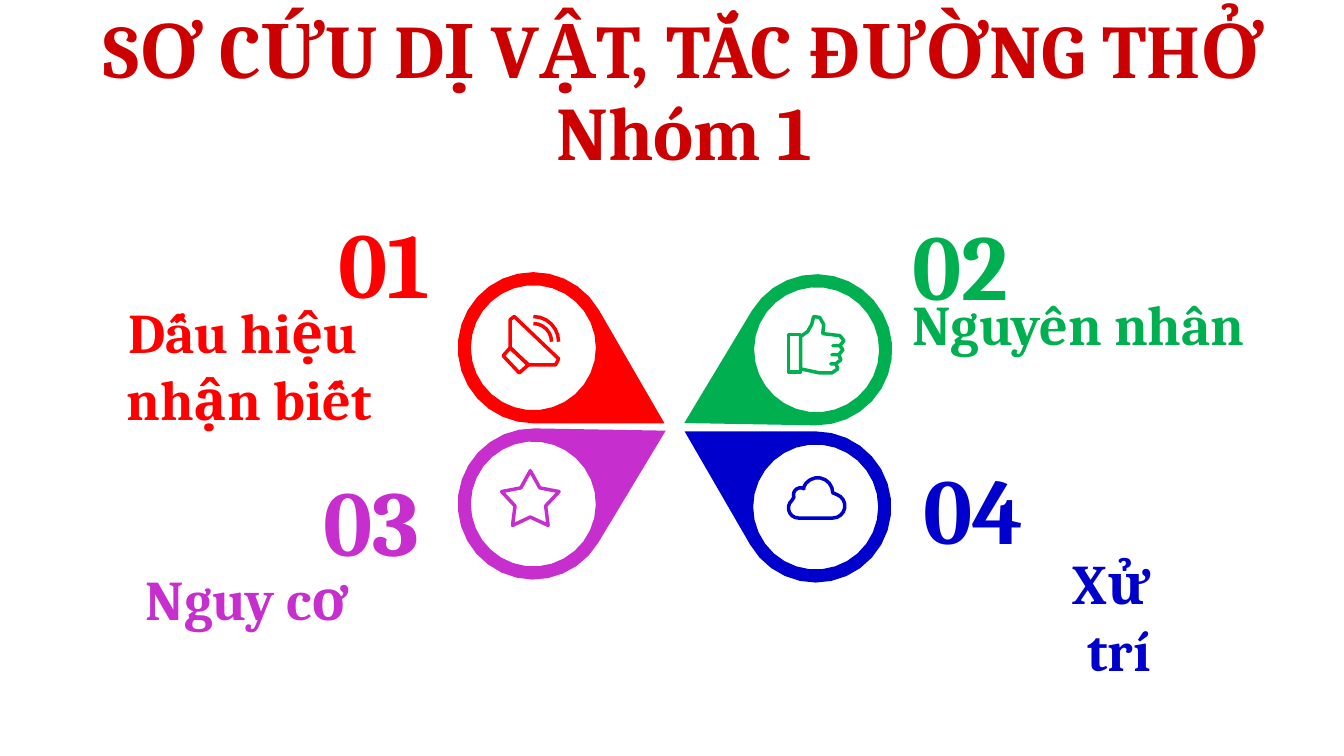
import math

import pptx
import pptx.dml.color
import pptx.enum.text
import pptx.util

Inches = pptx.util.Inches
ALIGN = pptx.enum.text.PP_ALIGN
ANCHOR = pptx.enum.text.MSO_ANCHOR
RGBColor = pptx.dml.color.RGBColor

WHITE = RGBColor(0xFF, 0xFF, 0xFF)
TITLE_RED = RGBColor(0xCC, 0x00, 0x00)
RED = RGBColor(0xFF, 0x00, 0x00)
GREEN = RGBColor(0x00, 0xB0, 0x50)
PURPLE = RGBColor(0xC6, 0x2E, 0xCD)
BLUE = RGBColor(0x00, 0x00, 0xCC)


def arc(center, radius, start, end, step=12):
    """List points on an arc, with angles clockwise from the right."""
    return [(center[0] + radius * math.cos(math.radians(angle)),
             center[1] + radius * math.sin(math.radians(angle)))
            for angle in range(start, end + 1, step)]


# Icons are stroked contours: thumb, speaker with two waves, star, cloud
THUMB = [
    [(7.82, 3.32), (7.94, 3.32), (7.94, 3.69), (7.82, 3.69)],
    [(7.94, 3.34), (8.01, 3.29), (8.05, 3.22), (8.07, 3.14), (8.13, 3.15), (8.17, 3.22),
     (8.16, 3.31), (8.33, 3.33), (8.37, 3.38), (8.33, 3.43), (8.26, 3.43), (8.33, 3.43),
     (8.36, 3.47), (8.32, 3.52), (8.25, 3.52), (8.32, 3.52), (8.34, 3.57), (8.29, 3.61),
     (8.24, 3.61), (8.29, 3.61), (8.31, 3.66), (8.25, 3.7), (8.13, 3.7), (7.94, 3.66)],
]
SPEAKER = [
    [(5.06, 3.17), (5.1, 3.14), (5.54, 3.56), (5.51, 3.62), (5.24, 3.62), (5.06, 3.45)],
    [(5.06, 3.45), (4.99, 3.53), (5.15, 3.7), (5.24, 3.62)],
]
INNER_WAVE, OUTER_WAVE = [[arc((5.29, 3.39), radius, -90, 0, 15)] for radius in (0.18, 0.25)]
STAR = [[point for angle in range(-90, 270, 72)
         for point in (arc((5.26, 4.97), 0.3, angle, angle)
                       + arc((5.26, 4.97), 0.16, angle + 36, angle + 36))]]
CLOUD = [arc((7.92, 5.04), 0.1, 90, 230, 20) + arc((7.94, 4.91), 0.07, 160, 300, 20)
         + arc((8.11, 4.89), 0.15, 200, 360, 20) + arc((8.26, 5.02), 0.12, -70, 90, 20)]


class Slide:
    font = "Cambria"
    stroke = pptx.util.Pt(2.5)

    def __init__(self, deck):
        self.page = deck.slides.add_slide(deck.slide_layouts[6])
        self.page.background.fill.solid()
        self.page.background.fill.fore_color.rgb = WHITE

    def group(self):
        return self.page.shapes.add_group_shape().shapes

    def text(self, text, place, shapes=None, size=40, color=TITLE_RED,
             align=ALIGN.LEFT, anchor=ANCHOR.TOP, spacing=1.0):
        box = (shapes or self.page.shapes).add_textbox(*map(Inches, place))
        frame = box.text_frame
        frame.word_wrap = True
        frame.vertical_anchor = anchor
        frame.text = text
        for para in frame.paragraphs:
            para.alignment = align
            para.line_spacing = spacing
            for span in para.runs:
                span.font.name = self.font
                span.font.size = pptx.util.Pt(size)
                span.font.bold = True
                span.font.color.rgb = color

    def outline(self, shapes, contours, close=True):
        first, *others = [[(Inches(x), Inches(y)) for x, y in points] for points in contours]
        builder = shapes.build_freeform(*first[0])
        builder.add_line_segments(first[1:], close=close)
        for points in others:
            builder.move_to(*points[0])
            builder.add_line_segments(points[1:], close=close)
        shape = builder.convert_to_shape()
        shape.shadow.inherit = False
        return shape

    def icon(self, shapes, contours, color, close=True):
        shape = self.outline(shapes, contours, close)
        shape.fill.background()
        shape.line.color.rgb = color
        shape.line.width = self.stroke

    def pin(self, shapes, center, flip, tilt, color):
        """Draw a ring that runs out to a point, mirrored and tilted in degrees."""
        turn = math.radians(tilt)

        def place(point):
            x, y = point[0] * flip[0], point[1] * flip[1]
            return (center[0] + x * math.cos(turn) - y * math.sin(turn),
                    center[1] + x * math.sin(turn) + y * math.cos(turn))

        drop = arc((0, 0), 0.75, 90, 330) + [(1.3, 0.75)]
        hole = arc((0, 0), 0.62, 0, 348)
        shape = self.outline(shapes, [map(place, drop), map(place, hole)])
        shape.fill.solid()
        shape.fill.fore_color.rgb = color
        shape.line.fill.background()


def main():
    deck = pptx.Presentation()
    deck.slide_width, deck.slide_height = Inches(13.33), Inches(7.5)
    slide = Slide(deck)

    # Title
    slide.text("SƠ CỨU DỊ VẬT, TẮC ĐƯỜNG THỞ\vNhóm 1", (0.51, 0.51, 12.55, 0.87), size=54,
               align=ALIGN.CENTER, anchor=ANCHOR.MIDDLE, spacing=0.9)

    # Pins with their icons
    for center, flip, tilt, color, icon, waves in (
            ((8.1, 3.47), (-1, 1), 1, GREEN, THUMB, []),
            ((5.29, 3.45), (1, 1), 0, RED, SPEAKER, [INNER_WAVE, OUTER_WAVE]),
            ((5.29, 5), (1, -1), 1, PURPLE, STAR, []),
            ((8.09, 5.03), (-1, -1), 0, BLUE, CLOUD, [])):
        marker = slide.group()
        slide.pin(marker, center, flip, tilt, color)
        slide.icon(marker, icon, color)
        for wave in waves:
            slide.icon(marker, wave, color, close=False)

    # Numbers and topics
    for number, corner, side, topic, place, align, color in (
            ("01", (3.26, 2), ALIGN.LEFT, "Dấu hiệu \nnhận biết",
             (0.23, 2.9, 4.48, 1.45), ALIGN.CENTER, RED),
            ("03", (3.11, 4.56), ALIGN.LEFT, "Nguy cơ",
             (0.31, 5.55, 4.29, 0.77), ALIGN.CENTER, PURPLE),
            ("02", (8.95, 2.02), ALIGN.LEFT, "Nguyên nhân",
             (8.95, 2.82, 4.38, 0.77), ALIGN.LEFT, GREEN),
            ("04", (8.95, 4.44), ALIGN.RIGHT, "Xử trí",
             (9.81, 5.39, 1.7, 0.77), ALIGN.RIGHT, BLUE)):
        label = slide.group()
        slide.text(number, (*corner, 1.3, 1.21), label, size=66, color=color, align=side)
        slide.text(topic, place, label, color=color, align=align)

    deck.save("out.pptx")


if __name__ == "__main__":
    main()
